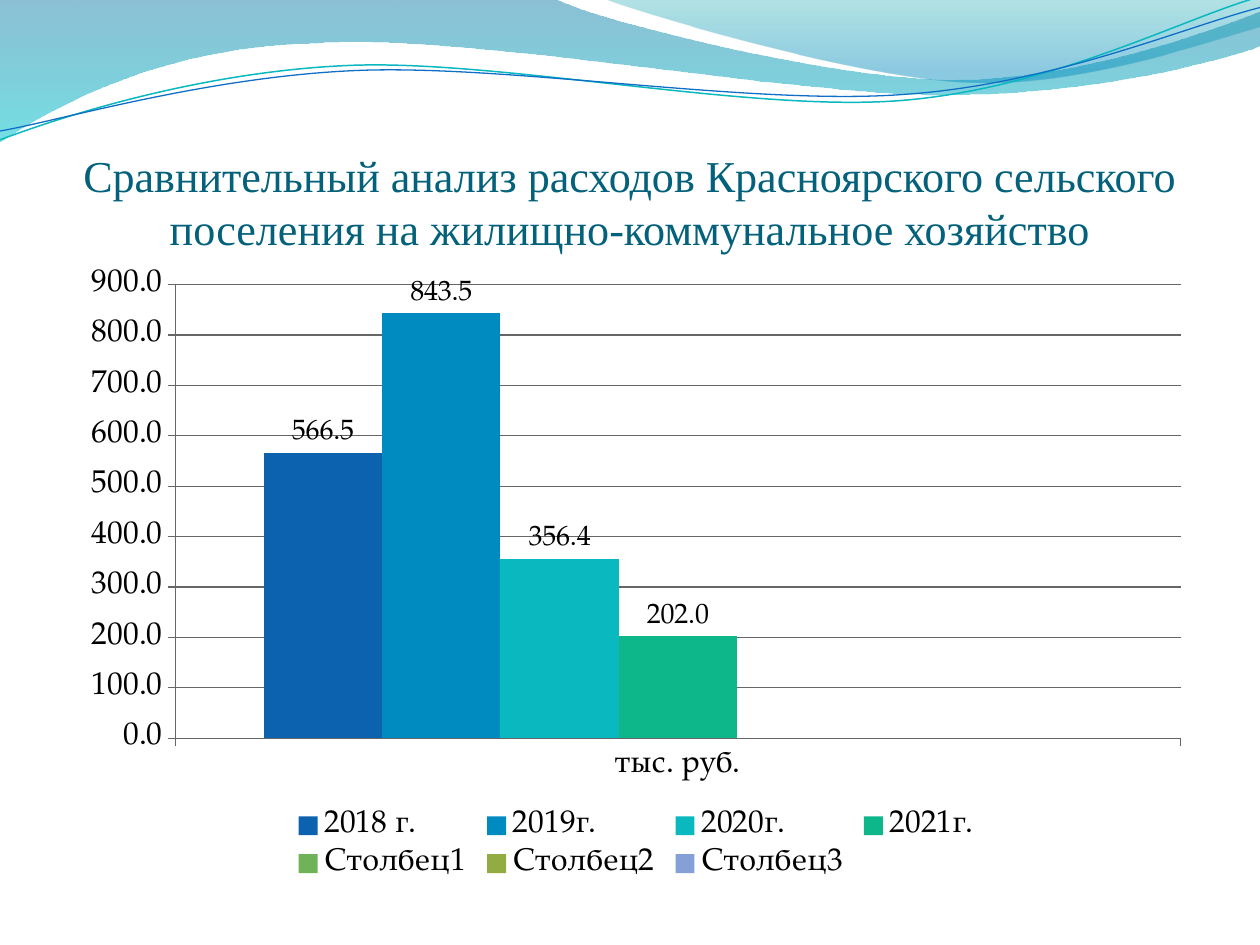
from lxml import etree
from pptx import Presentation
from pptx import util as u
from pptx.chart import data as chart_data
from pptx.dml import color as dml
from pptx.enum import chart as ce, text
from pptx.oxml import parse_xml
from pptx.oxml.ns import qn


def rgb(value):
    return dml.RGBColor.from_string(value)


def add_wave(slide, start, segments, closed):
    points = [(round(x * 100), round(y * 100)) for segment in segments for x, y in segment]
    builder = slide.shapes.build_freeform(start[0] * 100, start[1] * 100, scale=u.Inches(0.01))
    builder.add_line_segments(points, close=closed)
    shape = builder.convert_to_shape()
    shape.shadow.inherit = False
    nodes = iter(list(shape._element.spPr.iter(qn("a:lnTo"))))
    for segment in segments:
        first, *others = [next(nodes) for _ in segment]
        if others:
            curve = etree.Element(qn("a:cubicBezTo"))
            first.addprevious(curve)
            for node in (first, *others):
                curve.append(node[0])
                node.getparent().remove(node)
    return shape


presentation = Presentation()
presentation.slide_width, presentation.slide_height = u.Inches(10), u.Inches(7.5)
slide = presentation.slides.add_slide(presentation.slide_layouts[5])

bands = [
    ((0, 0),
     [[(4.4, -0.01)],
      [(4.76, 0.17), (6.64, 0.63), (7.58, 0.63)],
      [(8.53, 0.63), (9.58, 0.26), (10, 0.09)],
      [(10.01, 0.36)],
      [(9.83, 0.44), (8.7, 0.76), (7.46, 0.75)],
      [(6.22, 0.75), (3.82, 0.28), (2.57, 0.34)],
      [(1.29, 0.36), (0.46, 0.83), (-0.01, 1.13)]],
     [(0, "0074A1", 45), (1, "00C6CF", 55)]),
    ((4.79, -0.01),
     [[(5.09, 0.11), (6.82, 0.62), (7.69, 0.65)],
      [(8.56, 0.69), (9.61, 0.32), (10, 0.21)],
      [(10, 0)]],
     [(0, "00A1A9", 30), (0.8, "008BBF", 45)]),
]
for start, segments, stops in bands:
    band = add_wave(slide, start, segments, True)
    band.line.fill.background()
    band.fill.gradient()
    band.fill.gradient_angle = 270
    for stop, (position, color, _) in zip(band.fill.gradient_stops, stops):
        stop.position = position
        stop.color.rgb = rgb(color)
    for node, (_, _, opacity) in zip(band._element.spPr.iter(qn("a:srgbClr")), stops):
        etree.SubElement(node, qn("a:alpha"), val=str(opacity * 1000))

strands = [
    ((0, 1.11),
     [[(0.48, 0.93), (1.58, 0.57), (2.77, 0.52)],
      [(3.95, 0.47), (5.93, 0.89), (7.13, 0.8)],
      [(8.33, 0.71), (9.38, 0.15), (9.98, -0.02)]], "0AB8BF", 0.85),
    ((0, 1.04),
     [[(0.47, 0.96), (1.64, 0.61), (2.83, 0.56)],
      [(4.03, 0.51), (5.97, 0.84), (7.17, 0.75)],
      [(8.36, 0.67), (9.41, 0.21), (10, 0.06)]], "0F6FC6", 0.75),
]
for start, segments, color, width in strands:
    strand = add_wave(slide, start, segments, False)
    strand.fill.background()
    strand.line.color.rgb = rgb(color)
    strand.line.width = u.Pt(width)

title = slide.shapes.title
title_box = {"left": 0.5, "top": 0.77, "width": 9, "height": 1.25}
for name, value in title_box.items():
    setattr(title, name, u.Inches(value))
frame = title.text_frame
frame.text = ("Сравнительный анализ расходов Красноярского сельского "
              "поселения на жилищно-коммунальное хозяйство")
frame_format = {"auto_size": text.MSO_AUTO_SIZE.NONE, "word_wrap": True,
                "vertical_anchor": text.MSO_ANCHOR.BOTTOM, "margin_left": 0,
                "margin_right": 0, "margin_top": u.Inches(0.05), "margin_bottom": 0}
for name, value in frame_format.items():
    setattr(frame, name, value)
paragraph = frame.paragraphs[0]
paragraph.alignment = text.PP_ALIGN.CENTER
font = paragraph.runs[0].font
for name, value in {"name": "Times New Roman", "size": u.Pt(25.2), "bold": False}.items():
    setattr(font, name, value)
font.color.rgb = rgb("04617B")

number_format = "#,##0.0"
columns = [("2018 г.", 566.5, "0D62AF"), ("2019г.", 843.5, "008BC0"),
           ("2020г.", 356.4, "0AB8C0"), ("2021г.", 202, "0EB789"),
           ("Столбец1", None, "6EB357"), ("Столбец2", None, "92AC41"),
           ("Столбец3", None, "85A0D6")]
data = chart_data.CategoryChartData(number_format=number_format)
data.categories = ["тыс. руб."]
for name, value, _ in columns:
    data.add_series(name, [value])
chart = slide.shapes.add_chart(
    ce.XL_CHART_TYPE.COLUMN_CLUSTERED, u.Inches(0.55), u.Inches(2.03),
    u.Inches(9), u.Inches(5), data).chart
chart.has_title = False
chart.font.name = "TeX Gyre Pagella"
chart.font.size = u.Pt(18)
chart.font.color.rgb = rgb("000000")
chart.has_legend = True
chart.legend.position = ce.XL_LEGEND_POSITION.BOTTOM
chart.legend.include_in_layout = False

plot = chart.plots[0]
for name, value in {"gap_width": 150, "overlap": 0, "vary_by_categories": False}.items():
    setattr(plot, name, value)
for series, (_, value, color) in zip(plot.series, columns):
    series.format.fill.solid()
    series.format.fill.fore_color.rgb = rgb(color)
    if value is None:
        continue
    labels = series.data_labels
    label_format = {"show_value": True, "number_format": number_format,
                    "number_format_is_linked": False,
                    "position": ce.XL_LABEL_POSITION.OUTSIDE_END}
    for name, setting in label_format.items():
        setattr(labels, name, setting)
    labels.font.size = u.Pt(16)

value_axis, category_axis = chart.value_axis, chart.category_axis
axis_format = {"minimum_scale": 0, "maximum_scale": 900, "major_unit": 100,
               "has_major_gridlines": True}
for name, value in axis_format.items():
    setattr(value_axis, name, value)
value_axis.tick_labels.number_format = number_format
value_axis.tick_labels.number_format_is_linked = False
for axis in (value_axis, category_axis):
    axis.major_tick_mark = ce.XL_TICK_MARK.OUTSIDE
for item in (value_axis, category_axis, value_axis.major_gridlines):
    item.format.line.color.rgb = rgb("666666")
    item.format.line.width = u.Pt(0.75)

plot_area = chart._chartSpace.chart.plotArea
for old_layout in plot_area.findall(qn("c:layout")):
    plot_area.remove(old_layout)
places = {"x": 0.84 / 9, "y": 0.23 / 5, "w": 7.98 / 9, "h": 3.6 / 5}
modes = '<c:layoutTarget val="inner"/><c:xMode val="edge"/><c:yMode val="edge"/>'
sizes = "".join(f'<c:{name} val="{value}"/>' for name, value in places.items())
namespace = "http://schemas.openxmlformats.org/drawingml/2006/chart"
plot_area.insert(0, parse_xml(
    f'<c:layout xmlns:c="{namespace}"><c:manualLayout>{modes}{sizes}</c:manualLayout></c:layout>'))

presentation.save("out.pptx")
